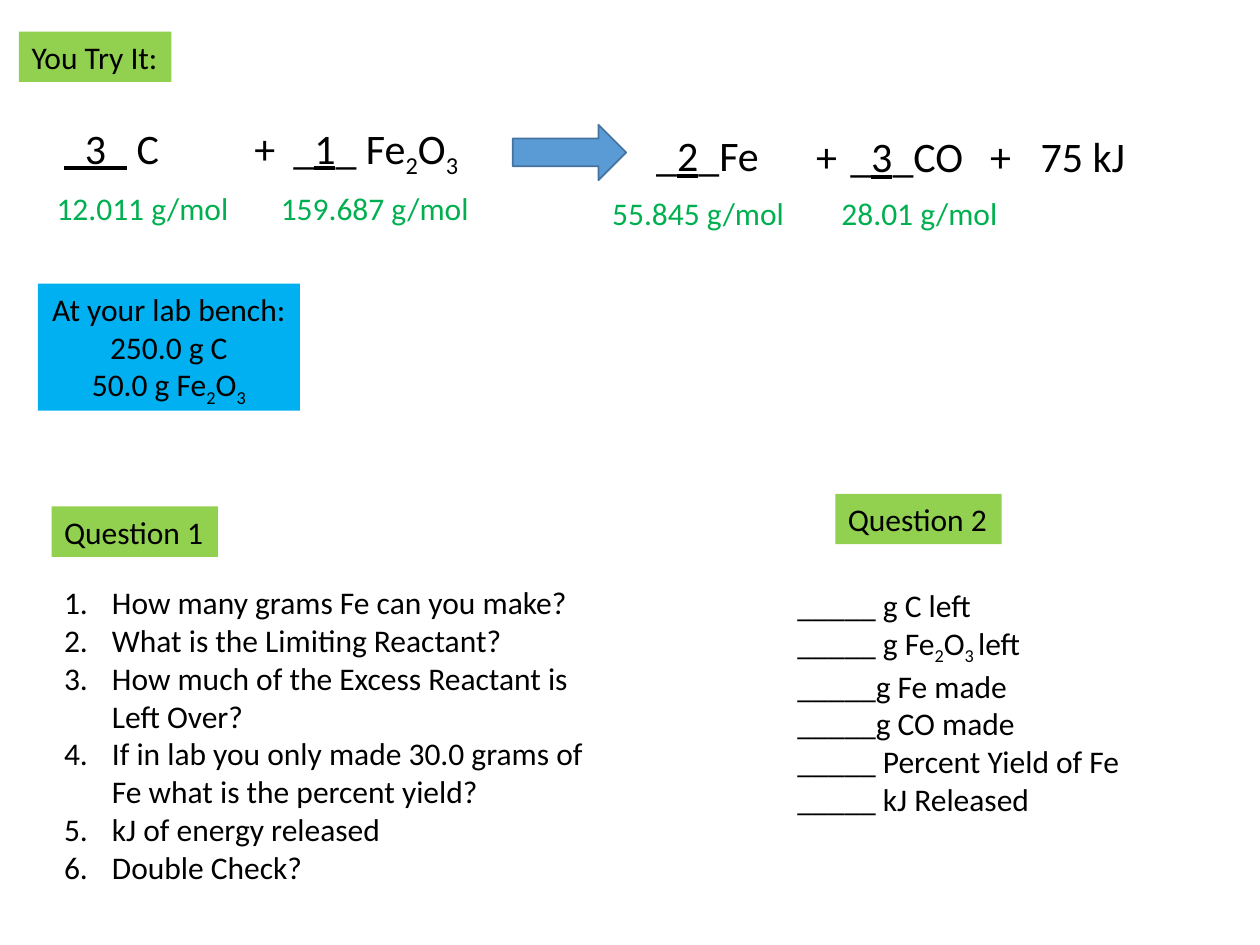
"""Build a limiting-reactant practice slide about carbon and iron oxide."""
from dataclasses import dataclass

from lxml import etree
from pptx import Presentation
from pptx.dml.color import RGBColor
from pptx.enum.shapes import MSO_SHAPE
from pptx.enum.text import MSO_ANCHOR, MSO_AUTO_SIZE, PP_ALIGN
from pptx.oxml.ns import qn
from pptx.util import Inches, Pt

LEFT, CENTER = PP_ALIGN.LEFT, PP_ALIGN.CENTER
TOP = MSO_ANCHOR.TOP
FIT_SHAPE, FIXED_SIZE = MSO_AUTO_SIZE.SHAPE_TO_FIT_TEXT, MSO_AUTO_SIZE.NONE
RIGHT_ARROW = MSO_SHAPE.RIGHT_ARROW


@dataclass(frozen=True)
class Theme:
    font: str = "Calibri"
    body: Pt = Pt(18)
    equation: Pt = Pt(24)
    text: RGBColor = RGBColor(0x00, 0x00, 0x00)
    mass: RGBColor = RGBColor(0x00, 0xB0, 0x50)
    label: RGBColor = RGBColor(0x92, 0xD0, 0x50)
    bench: RGBColor = RGBColor(0x00, 0xB0, 0xF0)
    arrow: RGBColor = RGBColor(0x5B, 0x9B, 0xD5)
    arrow_line: RGBColor = RGBColor(0x43, 0x73, 0x9E)


theme = Theme()


def write_lines(shape, lines, size=theme.body, color=theme.text, align=LEFT,
                wrap=False, auto_size=FIT_SHAPE):
    """Write lines whose |-separated parts are subscript after ~ and underlined after *."""
    frame = shape.text_frame
    frame.word_wrap = wrap
    frame.auto_size = auto_size
    frame.vertical_anchor = TOP
    for index, line in enumerate(lines):
        paragraph = frame.add_paragraph() if index else frame.paragraphs[0]
        paragraph.alignment = align
        paragraph.font.name = theme.font
        paragraph.font.size = size
        paragraph.font.color.rgb = color
        for part in line.split("|"):
            run = paragraph.add_run()
            run.text = part.lstrip("~*")
            if part.startswith("~"):
                run.font._element.set("baseline", "-25000")
            elif part.startswith("*"):
                run.font.underline = True


def add_text(shapes, box, lines, fill=None, **style):
    """Add a text box, filled when a colour is given."""
    shape = shapes.add_textbox(*map(Inches, box))
    if fill is not None:
        shape.fill.solid()
        shape.fill.fore_color.rgb = fill
    write_lines(shape, lines, **style)
    return shape


presentation = Presentation()
presentation.slide_width, presentation.slide_height = Inches(10), Inches(7.5)
slide = presentation.slides.add_slide(presentation.slide_layouts[5])

title = slide.shapes.title
title.left, title.top, title.width, title.height = map(Inches, (0.15, 0.25, 1.21, 0.4))
title.fill.solid()
title.fill.fore_color.rgb = theme.label
write_lines(title, ["You Try It:"], auto_size=FIXED_SIZE)

bench_lines = ["At your lab bench:", "250.0 g C", "50.0 g Fe|~2|O|~3"]
add_text(slide.shapes, (0.3, 2.25, 2.08, 1.01), bench_lines, fill=theme.bench, align=CENTER)

questions = add_text(slide.shapes, (0.41, 4.58, 4.48, 2.52), [
    "How many grams Fe can you make?",
    "What is the Limiting Reactant?",
    "How much of the Excess Reactant is Left Over?",
    "If in lab you only made 30.0 grams of Fe what is the percent yield?",
    "kJ of energy released",
    "Double Check?",
], wrap=True)
for paragraph in questions.text_frame.paragraphs:
    properties = paragraph._p.get_or_add_pPr()
    properties.set("marL", str(Inches(0.38)))
    properties.set("indent", str(Inches(-0.38)))
    numbering = etree.Element(qn("a:buAutoNum"), type="arabicPeriod")
    properties.insert(0, numbering)

add_text(slide.shapes, (6.23, 4.6, 2.79, 1.92), [
    "_____ g C left",
    "_____ g Fe|~2|O|~3 |left",
    "_____g Fe made",
    "_____g CO made",
    "_____ Percent Yield of Fe",
    "_____ kJ Released",
])

for number, (left, top) in enumerate([(0.41, 4.02), (6.63, 3.92)], start=1):
    add_text(slide.shapes, (left, top, 1.32, 0.4), [f"Question {number}"], fill=theme.label)

equation = slide.shapes.add_group_shape().shapes
for left, top, width, term in [
    (0.41, 0.92, 1.11, "*_3_| C"),
    (1.92, 0.92, 0.37, "+"),
    (2.23, 0.92, 1.55, "_|*1|_ Fe|~2|O|~3"),
    (5.11, 0.98, 1.03, "_|*2|_Fe"),
    (6.38, 0.99, 0.37, "+"),
]:
    add_text(equation, (left, top, width, 0.5), [term], size=theme.equation)

energy = add_text(equation, (6.65, 0.99, 2.45, 0.5), ["_|*3|_CO\t+\t75 kJ"],
                  size=theme.equation, wrap=True)
properties = energy.text_frame.paragraphs[0]._p.get_or_add_pPr()
tab_list = etree.Element(qn("a:tabLst"))
for position in (1.11, 1.51):
    etree.SubElement(tab_list, qn("a:tab"), pos=str(Inches(position)), algn="l")
properties.insert(0, tab_list)

arrow = equation.add_shape(RIGHT_ARROW, *map(Inches, (4.07, 0.99, 0.9, 0.44)))
arrow.shadow.inherit = False
arrow.fill.solid()
arrow.fill.fore_color.rgb = theme.arrow
arrow.line.color.rgb = theme.arrow_line
arrow.line.width = Pt(1)

for left, top, width, mass in [
    (0.35, 1.45, 1.58, "12.011"),
    (2.13, 1.45, 1.71, "159.687"),
    (4.76, 1.49, 1.58, "55.845"),
    (6.58, 1.49, 1.45, "28.01"),
]:
    add_text(equation, (left, top, width, 0.4), [f"{mass} g/mol"], color=theme.mass)

presentation.save("out.pptx")
